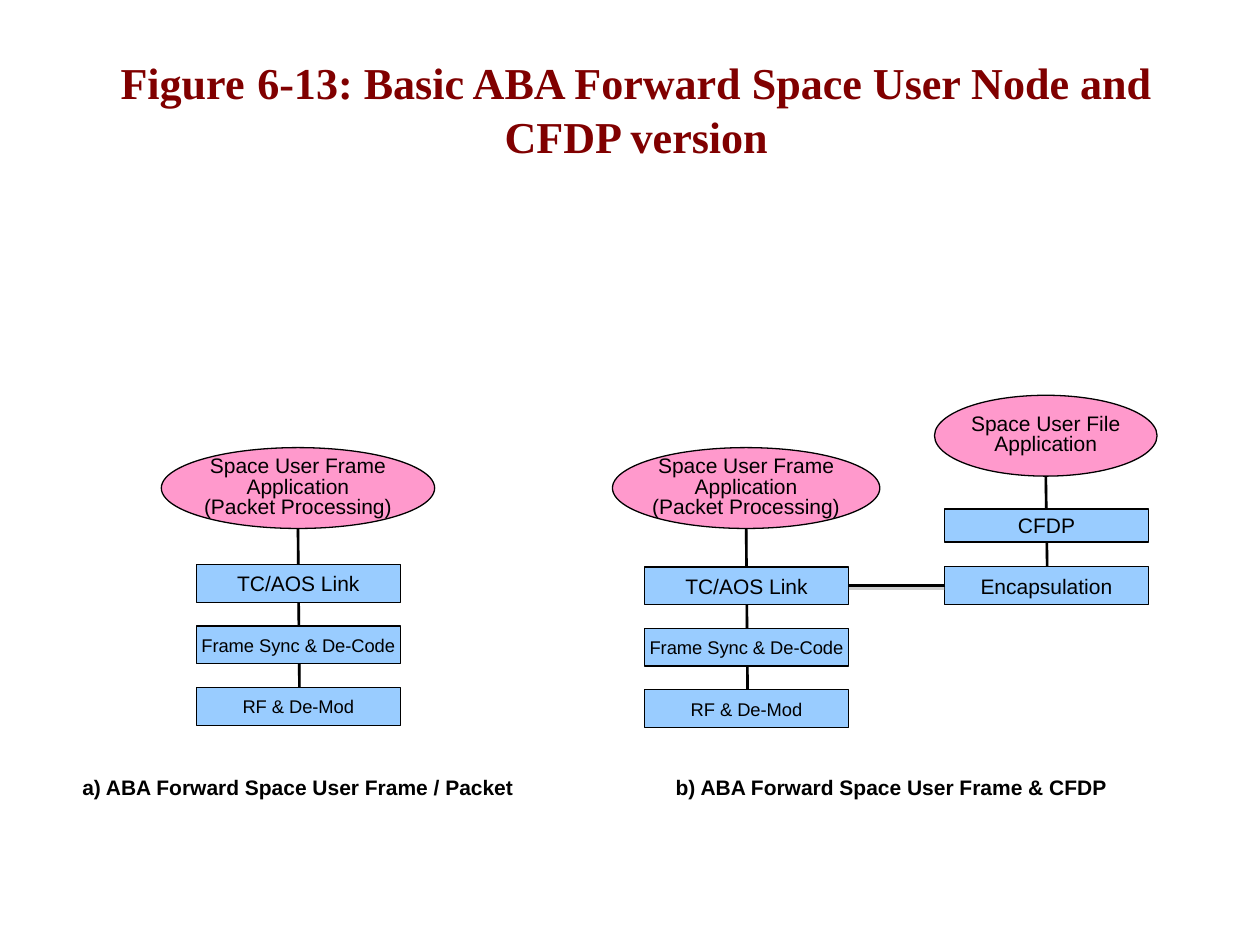
from lxml import etree
from pptx import Presentation
from pptx.dml.color import RGBColor
from pptx.enum.shapes import MSO_CONNECTOR, MSO_SHAPE
from pptx.enum.text import MSO_ANCHOR, PP_ALIGN
from pptx.oxml.ns import qn
from pptx.util import Pt

OVAL, RECT = MSO_SHAPE.OVAL, MSO_SHAPE.RECTANGLE
STRAIGHT = MSO_CONNECTOR.STRAIGHT
MIDDLE, CENTER = MSO_ANCHOR.MIDDLE, PP_ALIGN.CENTER

COLORS = {
    "title": "800000",
    "title_gap": "C00000",
    "application": "FF99CC",
    "layer": "99CCFF",
    "ink": "000000",
    "shadow": "808080",
}
LAYER_WIDTH, LAYER_HEIGHT = 116.6, 21.6
APPLICATION_HEIGHT = 46.2
FRAME_APPLICATION = ["Space User Frame\vApplication", "(Packet Processing)"]
FRAME_LAYERS = [("TC/AOS Link", 12), ("Frame Sync & De-Code", 10.5), ("RF & De-Mod", 10.5)]


def rgb(name):
    return RGBColor.from_string(COLORS[name])


def set_margins(frame, horizontal, vertical):
    frame.margin_left = frame.margin_right = Pt(horizontal)
    frame.margin_top = frame.margin_bottom = Pt(vertical)


def write_lines(frame, lines, size, bold=False, spacing=None):
    frame.vertical_anchor = MIDDLE
    for index, line in enumerate(lines):
        paragraph = frame.paragraphs[0] if index == 0 else frame.add_paragraph()
        paragraph.text = line
        paragraph.alignment = CENTER
        paragraph.line_spacing = spacing
        paragraph.font.name = "Arial"
        paragraph.font.size = Pt(size)
        paragraph.font.bold = bold
        paragraph.font.color.rgb = rgb("ink")


def add_node(slide, kind, left, top, width, height, fill):
    node = slide.shapes.add_shape(kind, Pt(left), Pt(top), Pt(width), Pt(height))
    node.shadow.inherit = False
    node.fill.solid()
    node.fill.fore_color.rgb = rgb(fill)
    node.line.color.rgb = rgb("ink")
    node.line.width = Pt(0.75)
    node.text_frame.word_wrap = True
    return node.text_frame


def add_application(slide, left, top, width, lines):
    frame = add_node(slide, OVAL, left, top, width, APPLICATION_HEIGHT, "application")
    set_margins(frame, 0, 0)
    write_lines(frame, lines, 12, spacing=0.8)


def add_layer(slide, left, top, height, label, size):
    frame = add_node(slide, RECT, left, top, LAYER_WIDTH, height, "layer")
    set_margins(frame, 2.9, 2.2)
    write_lines(frame, [label], size)


def add_link(slide, x1, y1, x2, y2):
    link = slide.shapes.add_connector(STRAIGHT, Pt(x1), Pt(y1), Pt(x2), Pt(y2))
    link.line.color.rgb = rgb("ink")
    link.line.width = Pt(1.5)
    effects = etree.SubElement(link._element.spPr, qn("a:effectLst"))
    shadow = etree.SubElement(effects, qn("a:outerShdw"), blurRad="0", dist=str(Pt(1.6)),
                              dir="5400000", rotWithShape="0")
    color = etree.SubElement(shadow, qn("a:srgbClr"), val=COLORS["shadow"])
    etree.SubElement(color, qn("a:alpha"), val="38000")


def add_frame_stack(slide, left, top, width, first_layer, pitch):
    center = left + width / 2
    tops = [first_layer + index * pitch for index in range(len(FRAME_LAYERS))]
    add_application(slide, left, top, width, FRAME_APPLICATION)
    add_link(slide, center, top + APPLICATION_HEIGHT, center + 0.8, tops[-1])
    for layer_top, (label, size) in zip(tops, FRAME_LAYERS):
        add_layer(slide, center - LAYER_WIDTH / 2 + 0.2, layer_top, LAYER_HEIGHT, label, size)


def add_file_stack(slide, left, top, width):
    center = left + width / 2
    layer_left = center - LAYER_WIDTH / 2 + 0.4
    encapsulation_top = top + 98
    add_application(slide, left, top, width, ["Space User File\vApplication"])
    add_link(slide, center, top + APPLICATION_HEIGHT, center + 0.8, encapsulation_top)
    add_layer(slide, layer_left, top + 64.9, 19, "CFDP", 12)
    add_layer(slide, layer_left, encapsulation_top, LAYER_HEIGHT, "Encapsulation", 12)


def add_caption(slide, left, top, width, height, text):
    caption = slide.shapes.add_textbox(Pt(left), Pt(top), Pt(width), Pt(height))
    caption.text_frame.word_wrap = False
    write_lines(caption.text_frame, [text], 12, bold=True, spacing=0.8)


def add_title(slide, left, top, width, height):
    frame = slide.shapes.add_textbox(Pt(left), Pt(top), Pt(width), Pt(height)).text_frame
    frame.word_wrap = True
    frame.vertical_anchor = MIDDLE
    paragraph = frame.paragraphs[0]
    paragraph.alignment = CENTER
    paragraph.font.name = "Times New Roman"
    paragraph.font.bold = True
    for text, size, color in [
        ("Figure", 25.2, "title"),
        (" ", 28.8, "title_gap"),
        ("6-13: Basic ABA Forward Space User Node and CFDP version", 25.2, "title"),
    ]:
        run = paragraph.add_run()
        run.text = text
        run.font.size = Pt(size)
        run.font.color.rgb = rgb(color)


def main():
    deck = Presentation()
    deck.slide_width, deck.slide_height = Pt(720), Pt(540)
    slide = deck.slides.add_slide(deck.slide_layouts[6])
    add_title(slide, 57.6, 30.2, 612, 60)
    add_frame_stack(slide, 92.2, 255.8, 156.2, 322.6, 35.2)
    add_frame_stack(slide, 350, 255.8, 152.8, 324, 35.1)
    add_file_stack(slide, 534, 225.9, 127.2)
    add_link(slide, 540, 334.7, 485, 334.7)
    add_caption(slide, 38.2, 441.4, 264.2, 19.4, "a) ABA Forward Space User Frame / Packet")
    add_caption(slide, 377.3, 441.4, 264.2, 19.4, "b) ABA Forward Space User Frame & CFDP")
    deck.save("out.pptx")


if __name__ == "__main__":
    main()
